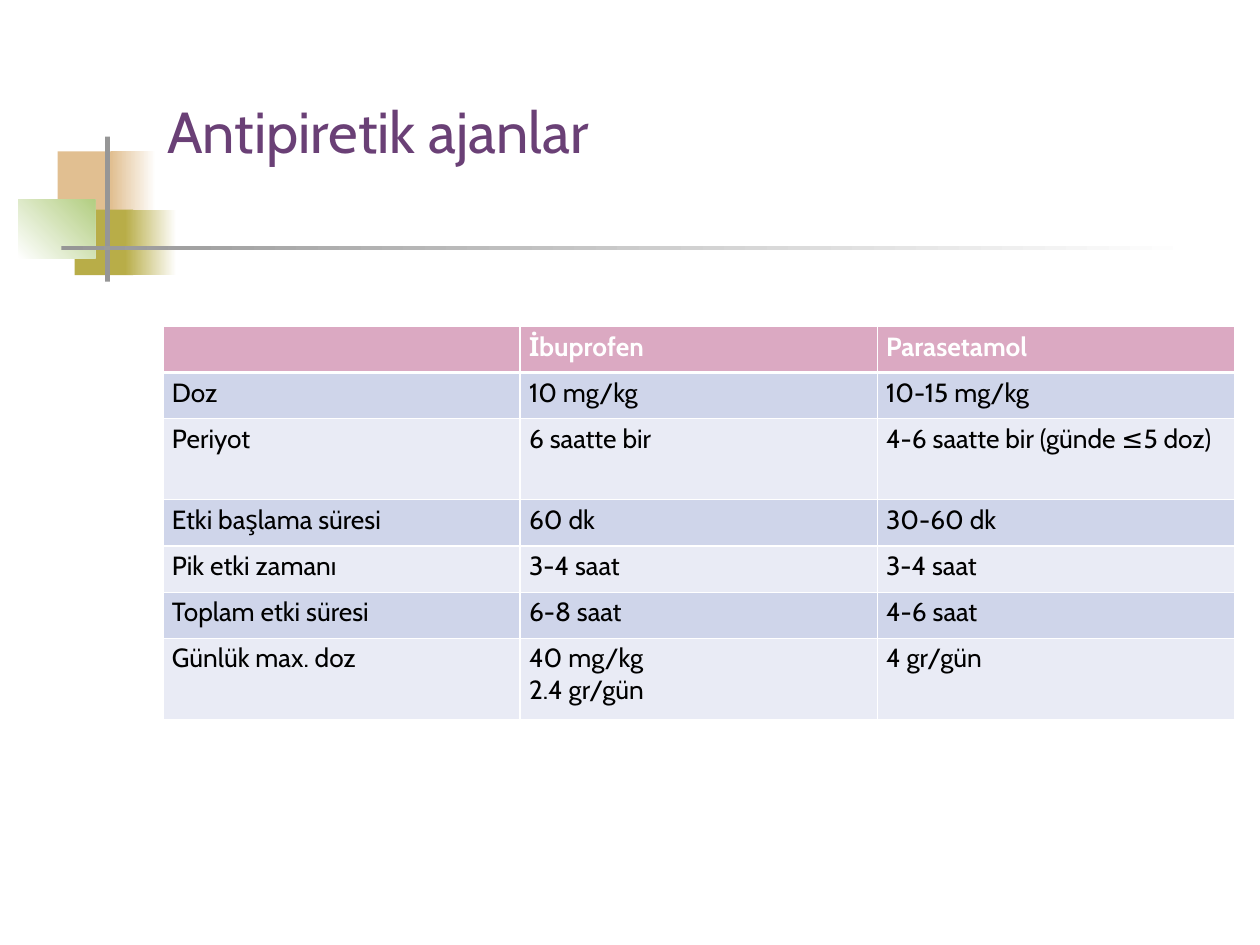
import dataclasses

import lxml.etree
import pptx
import pptx.dml.color
import pptx.enum.shapes
import pptx.enum.text
import pptx.oxml.ns
import pptx.util

Cm = pptx.util.Cm
Pt = pptx.util.Pt


@dataclasses.dataclass(frozen=True)
class Theme:
    font: str = "Cabin"
    title: str = "6A4076"
    head: str = "DBA9C2"
    bands: tuple = ("CFD5EA", "E9EBF5")
    white: str = "FFFFFF"
    black: str = "000000"
    peach: str = "E1BF91"
    olive: str = "B8AD48"
    green: str = "B3CE82"
    gray: str = "969696"
    big: float = 46.2
    small: float = 21


LOOK = Theme()

ROWS = [
    ("", "İbuprofen", "Parasetamol"),
    ("Doz", "10 mg/kg", "10-15 mg/kg"),
    ("Periyot", "6 saatte bir", "4-6 saatte bir (günde ≤5 doz)"),
    ("Etki başlama süresi", "60 dk", "30-60 dk"),
    ("Pik etki zamanı", "3-4 saat", "3-4 saat"),
    ("Toplam etki süresi", "6-8 saat", "4-6 saat"),
    ("Günlük max. doz", "40 mg/kg\n2.4 gr/gün", "4 gr/gün"),
]
TALL = (2, 6)  # rows with room for two lines


def tint(code):
    return pptx.dml.color.RGBColor.from_string(code)


def write(frame, text, size=LOOK.small, color=LOOK.black, bold=False,
          align=pptx.enum.text.PP_ALIGN.LEFT):
    frame.text = text
    for para in frame.paragraphs:
        para.alignment = align
        font = para.font
        for run in para.runs:
            font = run.font
            font.name = LOOK.font
            font.size = Pt(size)
            font.bold = bold
            font.color.rgb = tint(color)


def block(slide, box, start, end=None, angle=0):
    """Add a rectangle, plain or fading from start to end."""
    shape = slide.shapes.add_shape(
        pptx.enum.shapes.MSO_SHAPE.RECTANGLE, *map(Cm, box))
    shape.shadow.inherit = False
    shape.line.fill.background()
    if end is None:
        shape.fill.solid()
        shape.fill.fore_color.rgb = tint(start)
    else:
        shape.fill.gradient()
        shape.fill.gradient_angle = angle
        for stop, code, place in zip(shape.fill.gradient_stops, (start, end), (0, 1)):
            stop.color.rgb = tint(code)
            stop.position = place


def emblem(slide, left, top, width):
    """Draw the colour blocks and the crossed bars."""
    side, thin = 1.85, 0.13
    parts = [
        ((1.12, 0.41, 1.7, side), LOOK.peach),
        ((2.62, 0.41, 1.27, side), LOOK.peach, LOOK.white),
        ((1.6, 2.06, 1.65, side), LOOK.olive),
        ((3.02, 2.06, 1.45, side), LOOK.olive, LOOK.white),
        ((0, 1.78, 2.18, 1.65), LOOK.white, LOOK.green, 45),
        ((2.46, 0, thin, 4.09), LOOK.gray),
        ((1.22, 3.07, width - 1.22, thin), LOOK.gray, LOOK.white),
    ]
    for (x, y, w, h), *paint in parts:
        block(slide, (left + x, top + y, w, h), *paint)


def heading(slide, left, top, width, height):
    title = slide.shapes.title
    title.left, title.top = Cm(left), Cm(top)
    title.width, title.height = Cm(width), Cm(height)
    frame = title.text_frame
    frame.word_wrap = True
    frame.auto_size = pptx.enum.text.MSO_AUTO_SIZE.NONE
    frame.vertical_anchor = pptx.enum.text.MSO_ANCHOR.MIDDLE
    write(frame, "Antipiretik ajanlar", size=LOOK.big, color=LOOK.title)


def border(cell, **widths):
    """Give the cell white edges; they must come before its fill."""
    props = cell._tc.get_or_add_tcPr()
    for spot, (side, width) in enumerate(widths.items()):
        line = lxml.etree.Element(pptx.oxml.ns.qn("a:" + side), w=str(Pt(width)))
        fill = lxml.etree.SubElement(line, pptx.oxml.ns.qn("a:solidFill"))
        lxml.etree.SubElement(fill, pptx.oxml.ns.qn("a:srgbClr"), val=LOOK.white)
        props.insert(spot, line)


def grid(slide, left, top, width, low=1.3, high=2.29):
    """Add the table of doses, with equal columns."""
    count = len(ROWS[0])
    tall = [high if r in TALL else low for r in range(len(ROWS))]
    table = slide.shapes.add_table(
        len(ROWS), count, Cm(left), Cm(top), Cm(width), Cm(sum(tall))).table
    for col in table.columns:
        col.width = Cm(width / count)
    for r, texts in enumerate(ROWS):
        table.rows[r].height = Cm(tall[r])
        for c, text in enumerate(texts):
            cell = table.cell(r, c)
            cell.fill.solid()
            cell.fill.fore_color.rgb = tint(LOOK.bands[(r - 1) % 2] if r else LOOK.head)
            border(cell, lnL=1, lnR=1, lnT=3 if r == 1 else 1, lnB=1 if r else 3)
            if text:
                write(cell.text_frame, text, bold=r == 0,
                      color=LOOK.black if r else LOOK.white)


def main():
    deck = pptx.Presentation()
    deck.slide_width, deck.slide_height = Cm(35.56), Cm(26.67)
    slide = deck.slides.add_slide(deck.slide_layouts[5])
    emblem(slide, 0.51, 3.86, 33.2)
    heading(slide, 4.47, 0.84, 30.3, 5.69)
    grid(slide, 4.6, 9.22, 30.23)
    deck.save("out.pptx")


if __name__ == "__main__":
    main()
